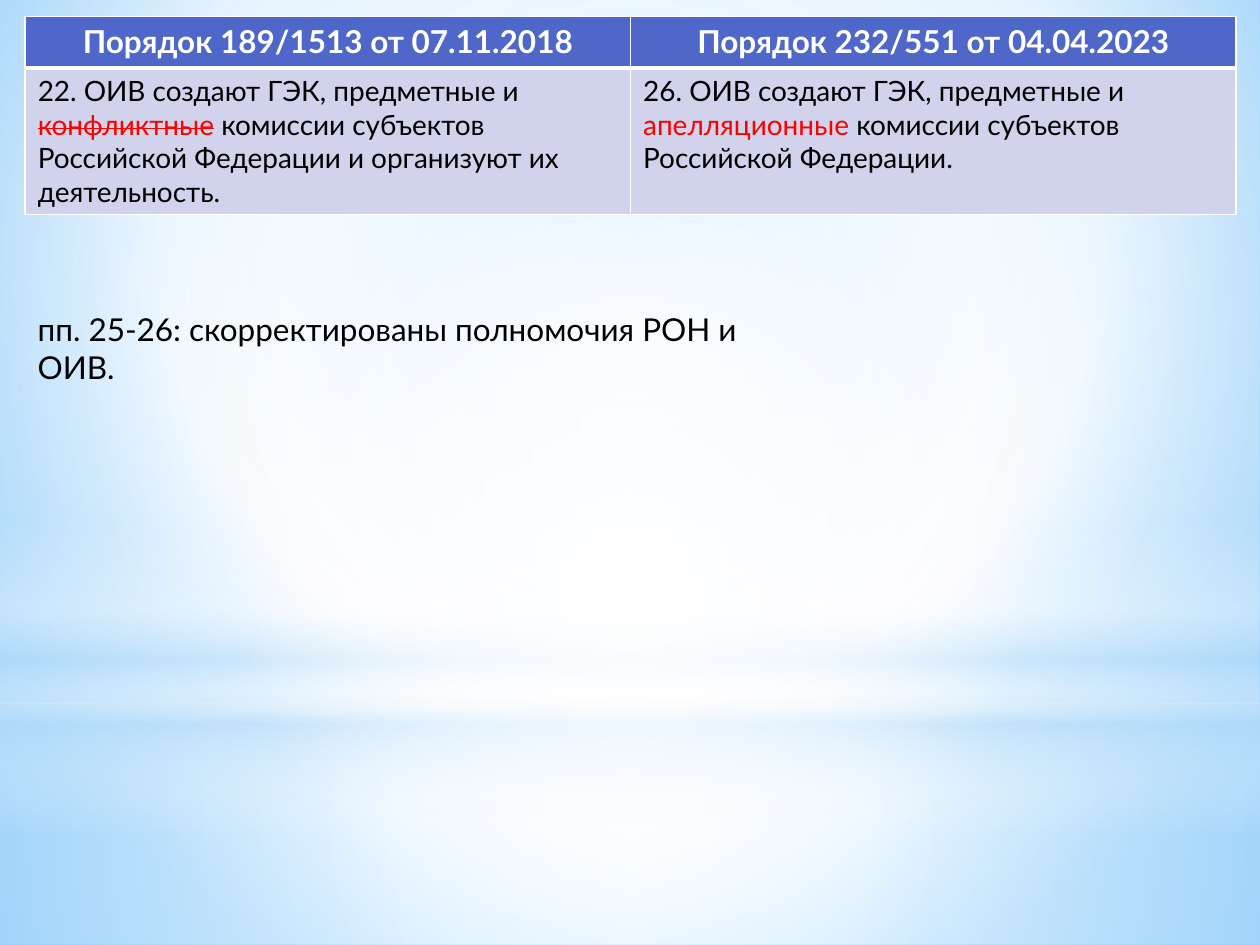
from lxml.etree import SubElement
from pptx import Presentation
from pptx.dml.color import RGBColor
from pptx.enum.shapes import MSO_SHAPE
from pptx.enum.text import PP_ALIGN
from pptx.oxml.ns import qn
from pptx.util import Inches, Pt

WHITE, BLACK, RED = "FFFFFF", "000000", "FF0000"
HEADER_BLUE, ROW_LILAC, SKY = "4E67C8", "D0D3EB", "B4DCFA"
CENTRE = (50, 50, 50, 50)


def color(hex_string):
    return RGBColor.from_string(hex_string)


def set_gradient(fill, owner, stops, focus=None):
    """Fill with (position, colour, opacity) stops, circular around focus or top to bottom."""
    fill.gradient()
    gradient = owner.find(".//" + qn("a:gradFill"))
    for child in list(gradient):
        gradient.remove(child)
    stop_list = SubElement(gradient, qn("a:gsLst"))
    for position, tint, opacity in stops:
        stop = SubElement(stop_list, qn("a:gs"), pos=str(position * 1000))
        shade = SubElement(stop, qn("a:srgbClr"), val=tint)
        if opacity < 100:
            SubElement(shade, qn("a:alpha"), val=str(opacity * 1000))
    if focus:
        circle = SubElement(gradient, qn("a:path"), {"path": "circle"})
        sides = {side: str(share * 1000) for side, share in zip("ltrb", focus)}
        SubElement(circle, qn("a:fillToRect"), sides)
    else:
        SubElement(gradient, qn("a:lin"), ang="5400000", scaled="0")


class SlideBuilder:
    def __init__(self, deck, font="Lato"):
        self.slide = deck.slides.add_slide(deck.slide_layouts[6])
        self.font = font

    def background(self, stops, focus):
        set_gradient(self.slide.background.fill, self.slide.element, stops, focus)

    def glow(self, kind, top, height, stops, focus=CENTRE):
        """Add a full-width translucent band of light."""
        shape = self.slide.shapes.add_shape(
            kind, 0, Inches(top), Inches(10), Inches(height))
        shape.shadow.inherit = False
        shape.line.fill.background()
        set_gradient(shape.fill, shape.element, stops, focus)

    def add_text(self, frame, spans, size, bold=False, align=PP_ALIGN.LEFT):
        """Put (text, colour, struck) spans into one paragraph."""
        para = frame.paragraphs[0]
        para.alignment = align
        para.font.name, para.font.size, para.font.bold = self.font, Pt(size), bold
        for text, tint, struck in spans:
            span = para.add_run()
            span.text = text
            span.font.color.rgb = color(tint)
            if struck:
                span.font._element.set("strike", "sngStrike")

    def border(self, cell, bottom):
        properties = cell._tc.get_or_add_tcPr()
        for side, width in (("L", 1), ("R", 1), ("T", 1), ("B", bottom)):
            line = SubElement(properties, qn(f"a:ln{side}"), w=str(int(Pt(width))))
            solid = SubElement(line, qn("a:solidFill"))
            SubElement(solid, qn("a:srgbClr"), val=WHITE)

    def comparison(self, left, top, width, heights, headings, clauses):
        """Add a table with a heading row over one row of clauses."""
        table = self.slide.shapes.add_table(
            2, len(headings), Inches(left), Inches(top),
            Inches(width), Inches(sum(heights))).table
        for row, height in zip(table.rows, heights):
            row.height = Inches(height)
        for column, (heading, clause) in enumerate(zip(headings, clauses)):
            head, body = table.cell(0, column), table.cell(1, column)
            for cell, tint, bottom in ((head, HEADER_BLUE, 3), (body, ROW_LILAC, 1)):
                self.border(cell, bottom)
                cell.fill.solid()
                cell.fill.fore_color.rgb = color(tint)
            self.add_text(head.text_frame, [(heading, WHITE, False)], 18, True, PP_ALIGN.CENTER)
            self.add_text(body.text_frame, clause, 16)

    def note(self, left, top, width, height, text):
        box = self.slide.shapes.add_textbox(
            Inches(left), Inches(top), Inches(width), Inches(height))
        box.text_frame.word_wrap = True
        self.add_text(box.text_frame, [(text, BLACK, False)], 18)


def main():
    deck = Presentation()
    deck.slide_width, deck.slide_height = Inches(10), Inches(7.5)
    page = SlideBuilder(deck)

    page.background([(0, "9ED5FF", 100), (60, WHITE, 100), (100, "5BB9FF", 100)],
                    (20, 10, 20, 60))
    page.glow(MSO_SHAPE.RECTANGLE, 5.58, 1.92,
              [(0, WHITE, 91), (37, WHITE, 76), (100, SKY, 79)])
    page.glow(MSO_SHAPE.RECTANGLE, 0, 5.58,
              [(0, WHITE, 89), (48, WHITE, 62), (100, SKY, 79)])
    page.glow(MSO_SHAPE.RECTANGLE, 4.12, 2.5,
              [(0, WHITE, 0), (29, WHITE, 30), (45, SKY, 40),
               (55, WHITE, 26), (65, SKY, 60), (100, WHITE, 0)], focus=None)
    page.glow(MSO_SHAPE.OVAL, 1.75, 5.58, [(0, WHITE, 100), (56, WHITE, 0)])

    page.comparison(
        0.2, 0.13, 9.61, (0.41, 1.16),
        ["Порядок 189/1513 от 07.11.2018", "Порядок 232/551 от 04.04.2023"],
        [[("22. ОИВ создают ГЭК, предметные и ", BLACK, False),
          ("конфликтные", RED, True),
          (" комиссии субъектов Российской Федерации и организуют их деятельность.",
           BLACK, False)],
         [("26. ОИВ создают ГЭК, предметные и ", BLACK, False),
          ("апелляционные", RED, False),
          (" комиссии субъектов Российской Федерации.", BLACK, False)]])
    page.note(0.2, 2.41, 6.39, 0.4, "пп. 25-26: скорректированы полномочия РОН и ОИВ.")
    deck.save("out.pptx")


if __name__ == "__main__":
    main()
